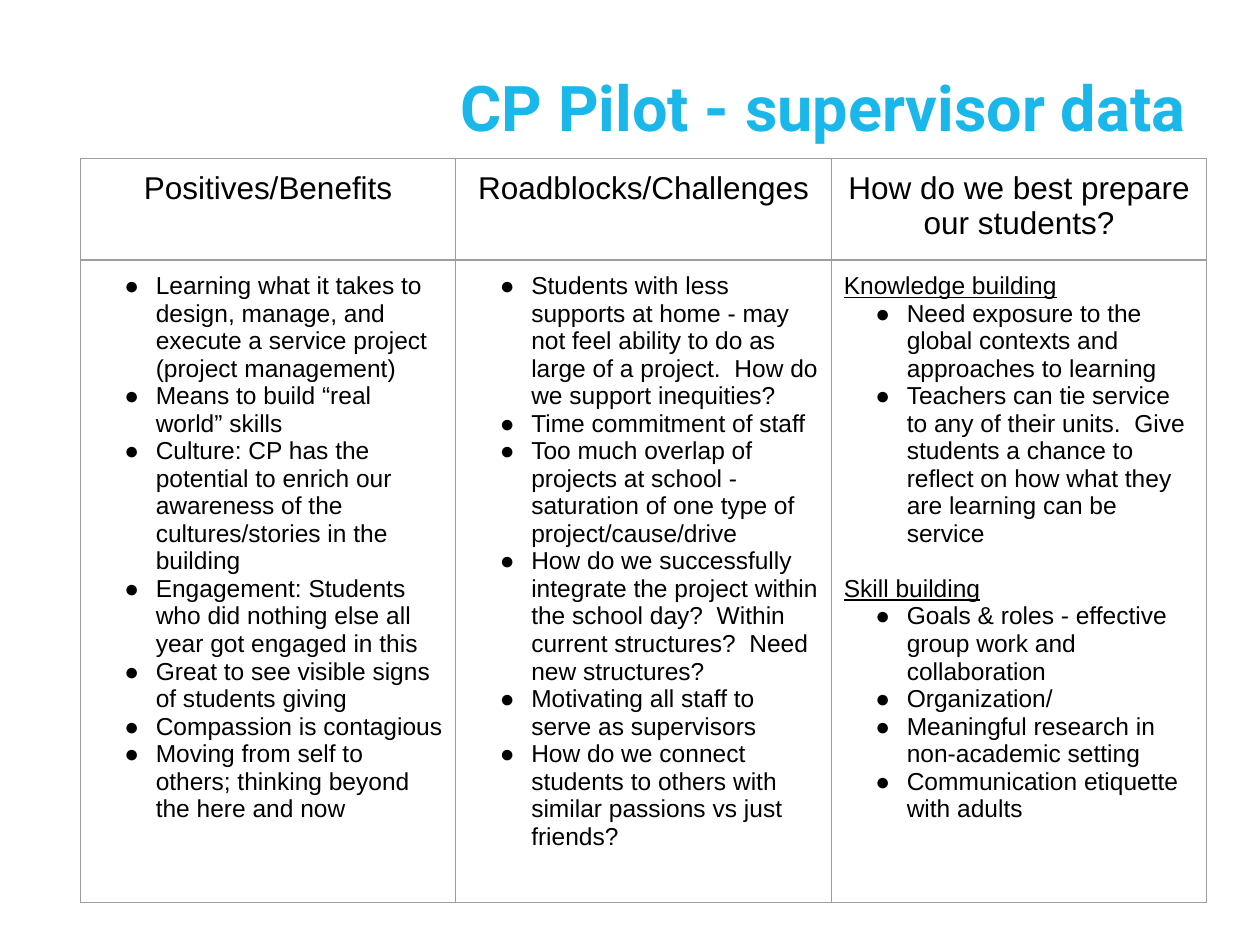
from dataclasses import dataclass

from lxml import etree
from pptx import Presentation
from pptx.dml.color import RGBColor
from pptx.enum.text import MSO_ANCHOR, PP_ALIGN
from pptx.oxml.ns import qn
from pptx.util import Cm, Pt

CENTER = PP_ALIGN.CENTER
BOTTOM = MSO_ANCHOR.BOTTOM
BLACK, BLUE, GRAY = "000000", "1AB7EA", "9E9E9E"
INSET = Cm(0.25)
BODY_SIZE = 14
SECTION_GAP = Pt(15.7)


@dataclass
class Section:
    bullets: list[str]
    heading: str = ""


@dataclass
class Column:
    title: str
    sections: list[Section]


COLUMNS = [
    Column("Positives/Benefits", [Section([
        "Learning what it takes to design, manage, and execute a service project (project management)",
        "Means to build “real world” skills",
        "Culture: CP has the potential to enrich our awareness of the cultures/stories in the building",
        "Engagement: Students who did nothing else all year got engaged in this",
        "Great to see visible signs of students giving",
        "Compassion is contagious",
        "Moving from self to others; thinking beyond the here and now",
    ])]),
    Column("Roadblocks/Challenges", [Section([
        "Students with less supports at home - may not feel ability to do as large of a project.  "
        "How do we support inequities?",
        "Time commitment of staff",
        "Too much overlap of projects at school - saturation of one type of project/cause/drive",
        "How do we successfully integrate the project within the school day?  "
        "Within current structures?  Need new structures?",
        "Motivating all staff to serve as supervisors",
        "How do we connect students to others with similar passions vs just friends?",
    ])]),
    Column("How do we best prepare our students?", [
        Section([
            "Need exposure to the global contexts and approaches to learning",
            "Teachers can tie service to any of their units.  Give students a chance to reflect "
            "on how what they are learning can be service",
        ], "Knowledge building"),
        Section([
            "Goals & roles - effective group work and collaboration",
            "Organization/",
            "Meaningful research in non-academic setting",
            "Communication etiquette with adults",
        ], "Skill building"),
    ]),
]


def color(hex_value: str) -> RGBColor:
    return RGBColor.from_string(hex_value)


def write(paragraph, text: str, size: float, name: str = "Arial", fill: str = BLACK,
          bold: bool = False, underline: bool = False) -> None:
    paragraph.text = text
    for run in paragraph.runs:
        run.font.name = name
        run.font.size = Pt(size)
        run.font.bold = bold
        run.font.underline = underline
        run.font.color.rgb = color(fill)


def add_bullet(paragraph) -> None:
    properties = paragraph._p.get_or_add_pPr()
    properties.set("marL", str(Cm(1.27)))
    properties.set("indent", str(-Cm(0.635)))
    bullet_color = etree.SubElement(properties, qn("a:buClr"))
    etree.SubElement(bullet_color, qn("a:srgbClr"), val=BLACK)
    etree.SubElement(properties, qn("a:buFont"), typeface="Arial")
    etree.SubElement(properties, qn("a:buChar"), char="●")


def set_insets(target) -> None:
    target.margin_left = target.margin_right = INSET
    target.margin_top = target.margin_bottom = INSET


def style_cell(cell) -> None:
    """Clear the fill, then set equal insets and thin gray borders."""
    cell.fill.background()
    set_insets(cell)
    properties = cell._tc.get_or_add_tcPr()
    for index, side in enumerate(("lnL", "lnR", "lnT", "lnB")):
        line = etree.Element(qn(f"a:{side}"), w=str(Pt(0.75)))
        fill = etree.SubElement(line, qn("a:solidFill"))
        etree.SubElement(fill, qn("a:srgbClr"), val=GRAY)
        properties.insert(index, line)


def write_sections(frame, sections: list[Section]) -> None:
    paragraph = frame.paragraphs[0]
    started = False
    for number, section in enumerate(sections):
        lines = [(section.heading, True)] if section.heading else []
        lines += [(bullet, False) for bullet in section.bullets]
        for position, (text, is_heading) in enumerate(lines):
            if started:
                paragraph = frame.add_paragraph()
            started = True
            if not is_heading:
                add_bullet(paragraph)
            if number and position == 0:
                paragraph.space_before = SECTION_GAP
            write(paragraph, text, BODY_SIZE, underline=is_heading)


def add_title(slide, text: str) -> None:
    frame = slide.shapes.add_textbox(Cm(9.04), Cm(1.24), Cm(16.05), Cm(1.93)).text_frame
    frame.word_wrap = True
    frame.vertical_anchor = BOTTOM
    set_insets(frame)
    frame.paragraphs[0].line_spacing = 0.9
    write(frame.paragraphs[0], text, 36, "Roboto", BLUE, bold=True)


def add_feedback_table(slide, columns: list[Column]) -> None:
    column_width, row_heights = Cm(7.57), (Cm(2.04), Cm(12.72))
    table = slide.shapes.add_table(len(row_heights), len(columns), Cm(1.62), Cm(3.2),
                                   column_width * len(columns), sum(row_heights)).table
    table.first_row = table.horz_banding = False
    for row, height in zip(table.rows, row_heights):
        row.height = height
    for index, column in enumerate(columns):
        table.columns[index].width = column_width
        header, body = table.cell(0, index), table.cell(1, index)
        for cell in (header, body):
            style_cell(cell)
        heading = header.text_frame.paragraphs[0]
        heading.alignment = CENTER
        write(heading, column.title, 18)
        write_sections(body.text_frame, column.sections)


def main() -> None:
    presentation = Presentation()
    presentation.slide_width, presentation.slide_height = Cm(25.4), Cm(19.05)
    slide = presentation.slides.add_slide(presentation.slide_layouts[6])
    add_title(slide, "CP Pilot - supervisor data")
    add_feedback_table(slide, COLUMNS)
    presentation.save("out.pptx")


if __name__ == "__main__":
    main()
